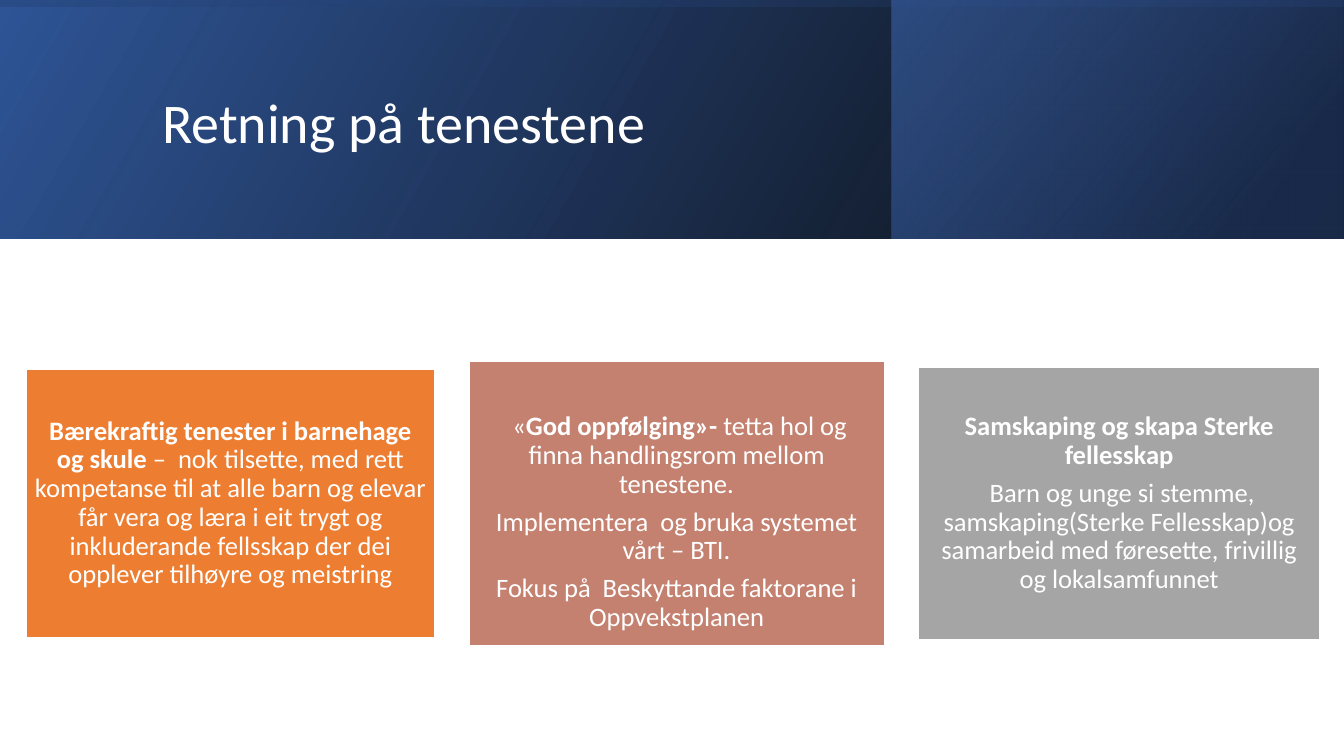
from lxml import etree
from pptx import Presentation
from pptx.dml.color import RGBColor
from pptx.enum.shapes import MSO_SHAPE
from pptx.enum.text import MSO_ANCHOR, PP_ALIGN
from pptx.oxml.ns import qn
from pptx.util import Inches, Pt

RECTANGLE = MSO_SHAPE.RECTANGLE
MIDDLE = MSO_ANCHOR.MIDDLE
CENTER = PP_ALIGN.CENTER
LEFT = PP_ALIGN.LEFT


def color(value):
    return RGBColor.from_string(value)


def write(shape, paragraphs, frame_format, paragraph_format, size):
    frame = shape.text_frame
    for name, value in frame_format.items():
        setattr(frame, name, value)
    for index, runs in enumerate(paragraphs):
        paragraph = frame.add_paragraph() if index else frame.paragraphs[0]
        for name, value in paragraph_format.items():
            setattr(paragraph, name, value)
        for text, bold in runs:
            run = paragraph.add_run()
            run.text = text
            run.font.color.rgb = color("FFFFFF")
            font_format = {"name": "Calibri", "size": Pt(size), "bold": bold}
            for name, value in font_format.items():
                setattr(run.font, name, value)


presentation = Presentation()
presentation.slide_width = Inches(13.33)
presentation.slide_height = Inches(7.5)
slide = presentation.slides.add_slide(presentation.slide_layouts[6])

banners = [
    ((0, 0, 13.33, 2.37), 0, 30, [(0, "000000", 96), (100, "2F5597", 100)]),
    ((8.84, 0, 4.48, 2.37), 0, 40, [(19, "203864", 68), (100, "4472C4", 48)]),
    ((5.48, -5.48, 2.37, 13.33), 270, 10, [(23, "2F5597", 16), (99, "000000", 45)]),
]
for box, rotation, angle, stops in banners:
    shape = slide.shapes.add_shape(RECTANGLE, *map(Inches, box))
    shape.shadow.inherit = False
    shape.line.fill.background()
    shape.rotation = rotation
    shape._element.spPr.find(qn("a:xfrm")).set("flipH", "1")
    shape.fill.gradient()
    shape.fill.gradient_angle = angle
    for stop, (position, value, _) in zip(shape.fill.gradient_stops, stops):
        stop.position = position / 100
        stop.color.rgb = color(value)
    stop_colors = shape._element.spPr.findall(".//" + qn("a:srgbClr"))
    for stop_color, (_, _, opacity) in zip(stop_colors, stops):
        etree.SubElement(stop_color, qn("a:alpha")).set("val", str(opacity * 1000))

title = slide.shapes.add_textbox(Inches(1.51), Inches(0.38), Inches(10.63), Inches(1.72))
write(
    title,
    [[("Retning på tenestene", False)]],
    {"word_wrap": True, "vertical_anchor": MIDDLE},
    {"alignment": LEFT, "line_spacing": 0.9},
    40,
)

cards = [
    ((0.26, 3.66, 4.05, 2.67), "ED7D31", 0.08, [
        [("Bærekraftig tenester i barnehage og skule ", True),
         ("–  nok tilsette, med rett kompetanse til at alle barn og elevar får vera "
          "og læra i eit trygt og inkluderande fellsskap der dei opplever tilhøyre "
          "og meistring", False)],
    ]),
    ((4.65, 3.58, 4.12, 2.83), "C48170", 0.46, [
        [(" «", False), ("God oppfølging»- ", True),
         ("tetta hol og finna handlingsrom mellom tenestene.", False)],
        [("Implementera  og bruka systemet vårt – BTI.", False)],
        [("Fokus på  Beskyttande faktorane i Oppvekstplanen", False)],
    ]),
    ((9.11, 3.64, 3.98, 2.71), "A5A5A5", 0.08, [
        [("Samskaping og skapa Sterke fellesskap", True)],
        [(" Barn og unge si stemme, samskaping(Sterke Fellesskap)og samarbeid med "
          "føresette, frivillig og lokalsamfunnet", False)],
    ]),
]
for box, fill, top_margin, paragraphs in cards:
    card = slide.shapes.add_shape(RECTANGLE, *map(Inches, box))
    card.shadow.inherit = False
    card.fill.solid()
    card.fill.fore_color.rgb = color(fill)
    card.line.color.rgb = color("FFFFFF")
    card.line.width = Pt(1)
    frame_format = {
        "word_wrap": True,
        "vertical_anchor": MIDDLE,
        "margin_left": Inches(0.08),
        "margin_right": Inches(0.08),
        "margin_top": Inches(top_margin),
        "margin_bottom": Inches(0.08),
    }
    paragraph_format = {"alignment": CENTER, "line_spacing": 0.9, "space_after": Pt(6.5)}
    write(card, paragraphs, frame_format, paragraph_format, 19)

presentation.save("out.pptx")
